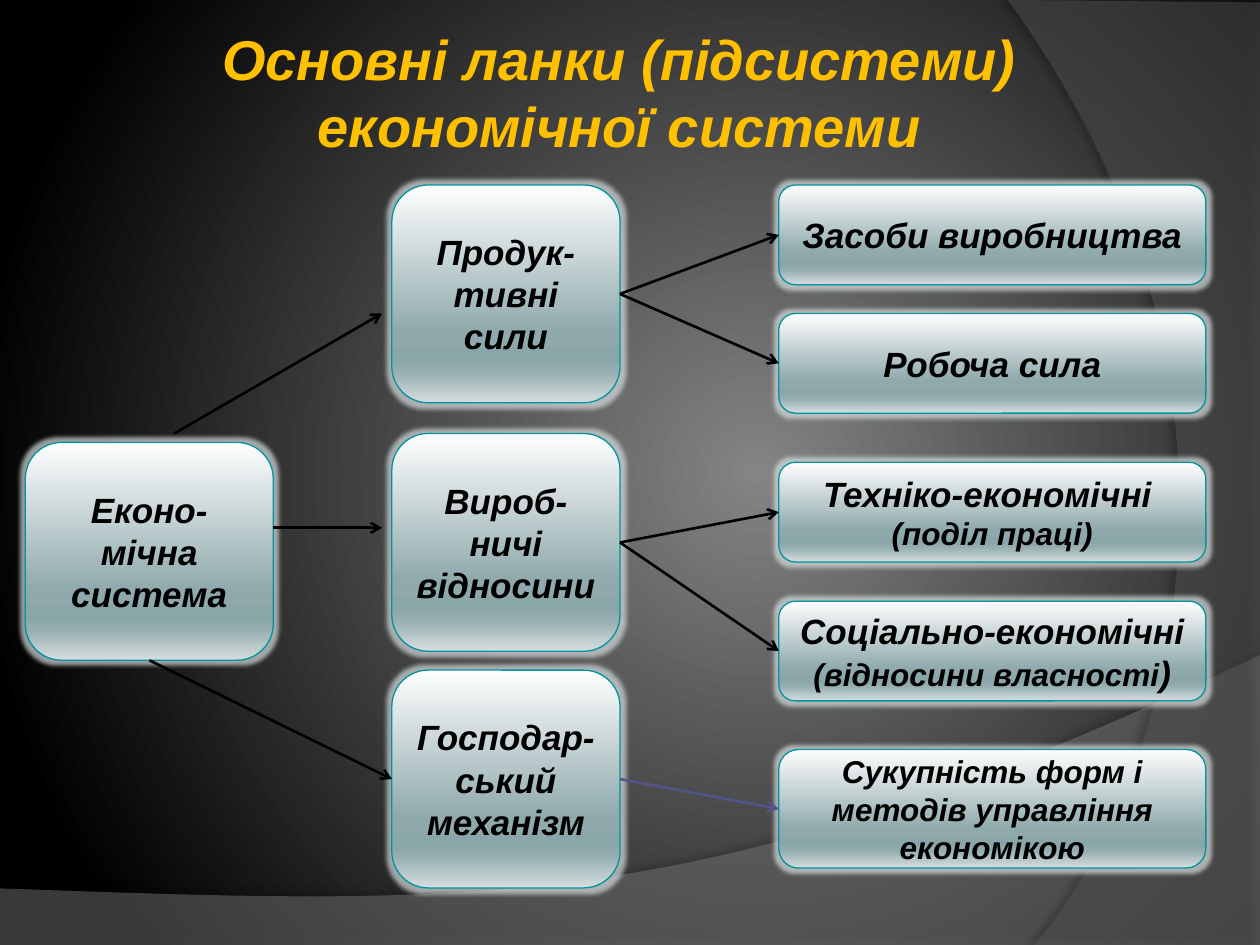
from dataclasses import dataclass

from lxml.etree import SubElement
from pptx import Presentation
from pptx.dml.color import RGBColor
from pptx.enum.shapes import MSO_CONNECTOR, MSO_SHAPE
from pptx.enum.text import MSO_ANCHOR, MSO_AUTO_SIZE, PP_ALIGN
from pptx.oxml import parse_xml
from pptx.oxml.ns import nsdecls, qn
from pptx.util import Cm, Pt


@dataclass(frozen=True)
class Theme:
    font: str = "Arial"
    title_color: str = "FFC000"
    text_color: str = "000000"
    box_line: str = "0093A1"
    glow: str = "D6DDDE"
    arrow: str = "000000"
    accent_arrow: str = "53548A"
    title_size: int = 32
    main_size: int = 20
    small_size: int = 18
    box_stops: tuple = ((0, "FEFEFE"), (68, "8FA9AC"), (81, "8BA6A9"),
                        (86, "98AFB2"), (100, "D6DDDE"))
    background_stops: tuple = ((0, "848484"), (100, "000000"))


THEME = Theme()
LARGE, SMALL = THEME.main_size, THEME.small_size
TOP, LEFT, BOTTOM, RIGHT = range(4)  # connection sites of a rounded box


@dataclass(frozen=True)
class Box:
    key: str
    left: float
    top: float
    width: float
    height: float
    paragraphs: tuple  # each paragraph is a tuple of (text, size) runs


@dataclass(frozen=True)
class Link:
    source: str
    target: str
    color: str = THEME.arrow
    source_site: int = RIGHT


@dataclass(frozen=True)
class Swoosh:
    points: list
    color: str
    opacity: int
    shadow_opacity: int
    shadow_distance: float
    shadow_angle: int


def subsystem(key: str, top: float, text: str) -> Box:
    return Box(key, 7.9, top, 4.6, 4.39, (((text, LARGE),),))


def component(key: str, top: float, *paragraphs: tuple, height: float = 2.01) -> Box:
    return Box(key, 15.7, top, 8.61, height, paragraphs)


BOXES = (
    Box("system", 0.51, 8.92, 5.0, 4.39, ((("Еконо-мічна система", LARGE),),)),
    subsystem("forces", 3.73, "Продук-тивні сили"),
    subsystem("relations", 8.74, "Вироб-ничі відносини"),
    subsystem("mechanism", 13.51, "Господар-ський механізм"),
    component("means", 3.73, (("Засоби виробництва", LARGE),)),
    component("labour", 6.32, (("Робоча сила", LARGE),)),
    component("technical", 9.32, (("Техніко-економічні ", LARGE),),
              (("(поділ праці)", SMALL),)),
    component("social", 12.12, (("Соціально-економічні", LARGE),),
              (("(відносини власності", SMALL), (")", LARGE))),
    component("methods", 15.11,
              (("Сукупність форм і методів управління економікою", SMALL),),
              height=2.39),
)
LINKS = (
    Link("system", "mechanism", source_site=BOTTOM),
    Link("forces", "means"),
    Link("forces", "labour"),
    Link("relations", "technical"),
    Link("relations", "social"),
    Link("mechanism", "methods", THEME.accent_arrow),
)
# Arrows that stop short of the boxes: start x, y, end x, y
FREE_ARROWS = ((3.51, 8.74, 7.7, 6.32), (5.51, 10.64, 7.7, 10.64))


def curve(start: tuple, first: tuple, second: tuple, end: tuple, steps: int = 40) -> list:
    """Points along a cubic Bezier curve."""
    points = []
    for step in range(steps + 1):
        t = step / steps
        weights = ((1 - t) ** 3, 3 * t * (1 - t) ** 2, 3 * t * t * (1 - t), t ** 3)
        points.append(tuple(sum(weight * value for weight, value in zip(weights, values))
                            for values in zip(start, first, second, end)))
    return points


SWOOSHES = (
    Swoosh([(0, 19.05), (25.4, 19.05),
            *curve((25.4, 13.21), (14.2, 18.52), (9.93, 18.26), (0, 17.91))],
           "7F7F7F", 45, 35, 3.5, 270),
    Swoosh([(25.4, 0.05), (25.4, 19.05),
            *curve((20.85, 19.05), (23.75, 15.72), (25.86, 7.62), (20.32, 0))],
           "5E5E5E", 40, 45, 4, 180),
)


def gradient_xml(stops: tuple, direction: str) -> str:
    stop_list = "".join(f'<a:gs pos="{position * 1000}"><a:srgbClr val="{color}"/></a:gs>'
                        for position, color in stops)
    return (f'<a:gradFill {nsdecls("a")} rotWithShape="1"><a:gsLst>{stop_list}</a:gsLst>'
            f'{direction}</a:gradFill>')


def add_effect(shape, kind: str, color: str, opacity: int, **lengths: int) -> None:
    shape.shadow.inherit = False
    effects = shape.element.spPr.find(qn("a:effectLst"))
    effect = SubElement(effects, qn(f"a:{kind}"),
                        {name: str(value) for name, value in lengths.items()})
    color_element = SubElement(effect, qn("a:srgbClr"), val=color)
    SubElement(color_element, qn("a:alpha"), val=str(opacity * 1000))


def format_run(run, size: int, color: str) -> None:
    formats = {"name": THEME.font, "size": Pt(size), "bold": True, "italic": True}
    for name, value in formats.items():
        setattr(run.font, name, value)
    run.font.color.rgb = RGBColor.from_string(color)


def set_background(slide) -> None:
    direction = ('<a:path path="circle"><a:fillToRect l="60000" t="50000" '
                 'r="40000" b="50000"/></a:path>')
    slide.element.cSld.insert(0, parse_xml(
        f'<p:bg {nsdecls("p", "a")}><p:bgPr>'
        f'{gradient_xml(THEME.background_stops, direction)}<a:effectLst/></p:bgPr></p:bg>'))


def draw_swoosh(slide, swoosh: Swoosh) -> None:
    points = [(Cm(x), Cm(y)) for x, y in swoosh.points]
    builder = slide.shapes.build_freeform(*points[0])
    builder.add_line_segments(points[1:], close=True)
    shape = builder.convert_to_shape()
    shape.fill.solid()
    shape.fill.fore_color.rgb = RGBColor.from_string(swoosh.color)
    color_element = shape.element.spPr.find(qn("a:solidFill"))[0]
    SubElement(color_element, qn("a:alpha"), val=str(swoosh.opacity * 1000))
    shape.line.fill.background()
    add_effect(shape, "outerShdw", "000000", swoosh.shadow_opacity, blurRad=Pt(4),
               dist=Pt(swoosh.shadow_distance), dir=swoosh.shadow_angle * 60000)


def draw_title(slide, text: str) -> None:
    title = slide.shapes.title
    slide.shapes.element.append(title.element)  # above the swooshes
    place = {"left": 1.27, "top": 0.76, "width": 22.43, "height": 2.16}
    for name, value in place.items():
        setattr(title, name, Cm(value))
    frame = title.text_frame
    formats = {"word_wrap": True, "auto_size": MSO_AUTO_SIZE.NONE,
               "vertical_anchor": MSO_ANCHOR.MIDDLE}
    formats.update({f"margin_{side}": Cm(0.13) for side in ("left", "top", "right", "bottom")})
    for name, value in formats.items():
        setattr(frame, name, value)
    paragraph = frame.paragraphs[0]
    paragraph.alignment = PP_ALIGN.CENTER
    paragraph.line_spacing = 1.0
    run = paragraph.add_run()
    run.text = text
    format_run(run, THEME.title_size, THEME.title_color)


def draw_box(slide, box: Box):
    shape = slide.shapes.add_shape(MSO_SHAPE.ROUNDED_RECTANGLE, Cm(box.left), Cm(box.top),
                                   Cm(box.width), Cm(box.height))
    shape.line.color.rgb = RGBColor.from_string(THEME.box_line)
    shape.line.width = Pt(0.75)
    gradient = gradient_xml(THEME.box_stops, '<a:lin ang="5400000" scaled="0"/>')
    shape.element.spPr.find(qn("a:prstGeom")).addnext(parse_xml(gradient))
    add_effect(shape, "glow", THEME.glow, 70, rad=Pt(5))
    frame = shape.text_frame
    frame.word_wrap = True
    frame.vertical_anchor = MSO_ANCHOR.MIDDLE
    for index, runs in enumerate(box.paragraphs):
        paragraph = frame.add_paragraph() if index else frame.paragraphs[0]
        paragraph.alignment = PP_ALIGN.CENTER
        for text, size in runs:
            run = paragraph.add_run()
            run.text = text
            format_run(run, size, THEME.text_color)
    return shape


def draw_arrow(slide, color: str, ends: tuple = (0, 0, 0, 0)):
    arrow = slide.shapes.add_connector(MSO_CONNECTOR.STRAIGHT, *map(Cm, ends))
    arrow.line.color.rgb = RGBColor.from_string(color)
    arrow.line.width = Pt(1.5)
    SubElement(arrow.line._get_or_add_ln(), qn("a:tailEnd"), type="arrow")
    SubElement(arrow.element.spPr, qn("a:effectLst"))
    return arrow


def main() -> None:
    presentation = Presentation()
    presentation.slide_width, presentation.slide_height = Cm(25.4), Cm(19.05)
    slide = presentation.slides.add_slide(presentation.slide_layouts[5])

    # Backdrop and title
    set_background(slide)
    for swoosh in SWOOSHES:
        draw_swoosh(slide, swoosh)
    draw_title(slide, "Основні ланки (підсистеми) економічної системи")

    # Boxes and the arrows between them
    shapes = {box.key: draw_box(slide, box) for box in BOXES}
    for ends in FREE_ARROWS:
        draw_arrow(slide, THEME.arrow, ends)
    for link in LINKS:
        arrow = draw_arrow(slide, link.color)
        arrow.begin_connect(shapes[link.source], link.source_site)
        arrow.end_connect(shapes[link.target], LEFT)

    presentation.save("out.pptx")


if __name__ == "__main__":
    main()
